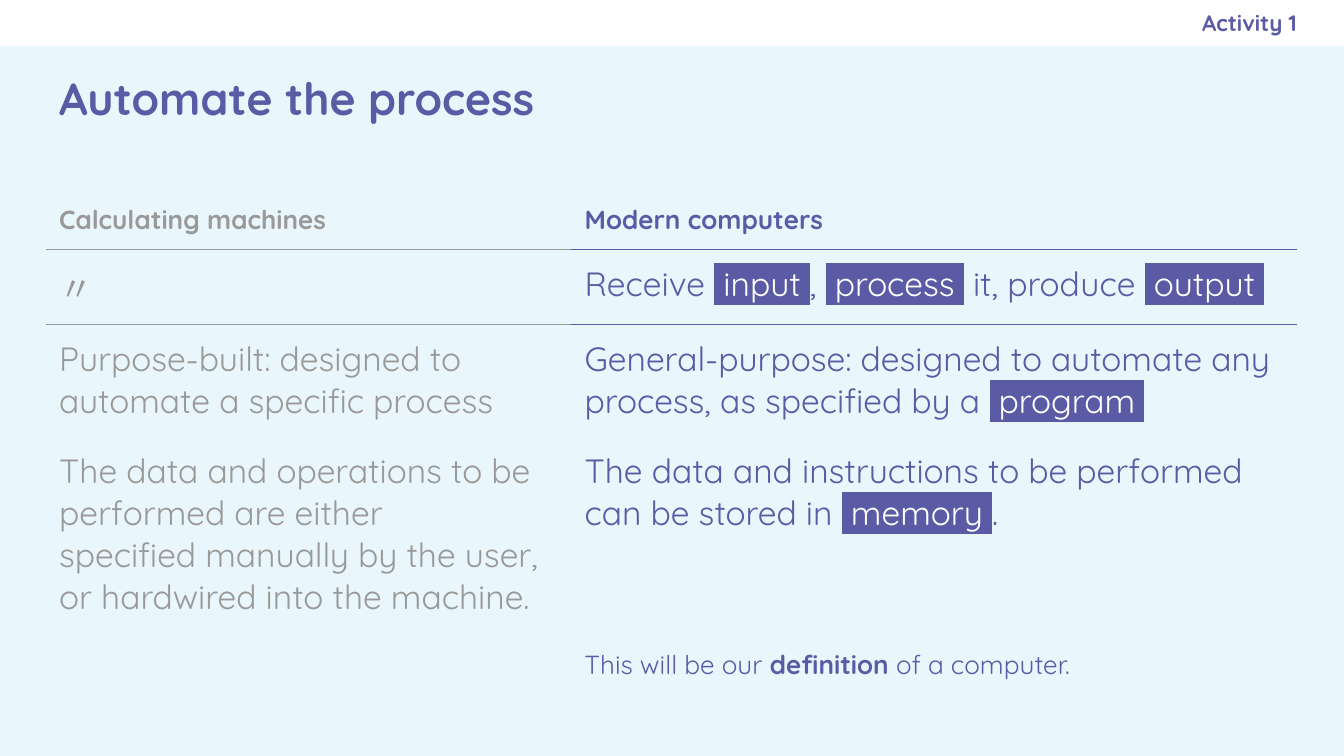
from lxml import etree
from pptx import Presentation
from pptx import util as u
from pptx.dml.color import RGBColor
from pptx.enum import shapes, text
from pptx.oxml import ns

COLOURS = {"ink": "5B5BA5", "muted": "999999", "paper": "E9F7FC", "white": "FFFFFF"}
COLUMNS, ROWS = 100, 56.25  # grid of tenth-inch units
COLUMN_STYLES = ("muted", "ink")

# A run is a string, or a (kind, string) pair: "key" is highlighted, "bold" is bold.
HEADERS = (["Calculating machines"], ["Modern computers"])
COMPARISON = [
    ([["〃"]],
     [["Receive ", ("key", " input "), ", ", ("key", " process "),
       " it, produce ", ("key", " output ")]]),
    ([["Purpose-built: designed to automate a specific process"]],
     [["General-purpose: designed to automate any process, as specified by a ",
       ("key", " program ")]]),
    ([["The data and operations to be performed are either"],
      ["specified manually by the user, or hardwired into the machine."]],
     [["The data and instructions to be performed can be stored in ",
       ("key", " memory "), "."]]),
]


def rgb(name):
    return RGBColor.from_string(COLOURS[name])


def add_colour(parent, tag, name):
    """Append a DrawingML colour container and return it."""
    element = etree.SubElement(parent, ns.qn(tag))
    etree.SubElement(element, ns.qn("a:srgbClr"), val=COLOURS[name])
    return element


def set_attributes(target, values):
    for name, value in values.items():
        setattr(target, name, value)


class SlideBuilder:
    font_name = "Quicksand"

    def __init__(self, presentation):
        self.unit_x = presentation.slide_width / COLUMNS
        self.unit_y = presentation.slide_height / ROWS
        self.slide = presentation.slides.add_slide(presentation.slide_layouts[0])
        fill = self.slide.background.fill
        fill.solid()
        fill.fore_color.rgb = rgb("paper")

    def area(self, left, top, width, height):
        units = (self.unit_x, self.unit_y, self.unit_x, self.unit_y)
        return [round(n * unit) for n, unit in zip((left, top, width, height), units)]

    def add_text(self, frame, paragraphs, size, colour, bold=False, **formats):
        for index, runs in enumerate(paragraphs):
            paragraph = frame.paragraphs[0] if index == 0 else frame.add_paragraph()
            values = {"alignment": text.PP_ALIGN.LEFT, "space_before": u.Pt(0)}
            set_attributes(paragraph, {**values, **formats})
            for item in runs:
                kind, words = ("plain", item) if isinstance(item, str) else item
                run = paragraph.add_run()
                run.text = words
                run.font.color.rgb = rgb("white" if kind == "key" else colour)
                if kind == "key":
                    properties = run._r.get_or_add_rPr()
                    highlight = add_colour(properties, "a:highlight", colour)
                    properties.find(ns.qn("a:solidFill")).addnext(highlight)
                set_attributes(run.font, {"name": self.font_name, "size": u.Pt(size),
                                          "bold": bold or kind == "bold"})

    def set_frame(self, frame, right_inset=0.1, anchor=text.MSO_ANCHOR.TOP):
        inset = u.Inches(0.1)
        set_attributes(frame, {
            "word_wrap": True, "auto_size": text.MSO_AUTO_SIZE.NONE,
            "vertical_anchor": anchor, "margin_left": inset, "margin_top": inset,
            "margin_bottom": inset, "margin_right": u.Inches(right_inset)})

    def band(self, area, colour):
        """Draw a plain strip behind everything else."""
        shape = self.slide.shapes.add_shape(shapes.MSO_SHAPE.RECTANGLE, *self.area(*area))
        shape.shadow.inherit = False
        shape.fill.solid()
        shape.fill.fore_color.rgb = rgb(colour)
        shape.line.fill.background()
        self.slide.shapes._spTree.insert(2, shape._element)

    def placeholder(self, index, area, words, size, right_inset=0.1, **formats):
        shape = self.slide.placeholders[index]
        places = zip(("left", "top", "width", "height"), self.area(*area))
        set_attributes(shape, dict(places))
        self.set_frame(shape.text_frame, right_inset, text.MSO_ANCHOR.MIDDLE)
        self.add_text(shape.text_frame, [[words]], size, "ink", bold=True, **formats)

    def text_box(self, area, runs, size, **formats):
        shape = self.slide.shapes.add_textbox(*self.area(*area))
        self.set_frame(shape.text_frame, 0.06)
        self.add_text(shape.text_frame, [runs], size, "ink", **formats)

    def borders(self, cell, colour, sides):
        properties = cell._tc.get_or_add_tcPr()
        for index, side in enumerate("LRTB"):
            line = etree.Element(ns.qn(f"a:ln{side}"), w=str(u.Pt(0.75)))
            if side in sides:
                add_colour(line, "a:solidFill", colour)
            else:
                etree.SubElement(line, ns.qn("a:noFill"))
            properties.insert(index, line)

    def comparison_table(self, left, top, widths, heights):
        area = self.area(left, top, sum(widths), sum(heights))
        table = self.slide.shapes.add_table(len(heights), len(widths), *area).table
        set_attributes(table, {"first_row": False, "horz_banding": False})
        for column, width in zip(table.columns, widths):
            column.width = round(width * self.unit_x)
        for row, height in zip(table.rows, heights):
            row.height = round(height * self.unit_y)
        contents = [[[header] for header in HEADERS], *COMPARISON]
        sides = ("B", "TB", "T", "")
        inset = u.Inches(0.1)
        for row, cells in enumerate(contents):
            for column, paragraphs in enumerate(cells):
                cell, colour = table.cell(row, column), COLUMN_STYLES[column]
                set_attributes(cell, {
                    "margin_left": inset, "margin_top": inset, "margin_bottom": inset,
                    "margin_right": u.Inches(0.16)})
                cell.fill.background()
                self.borders(cell, colour, sides[row])
                header = row == 0
                self.add_text(cell.text_frame, paragraphs, 14 if header else 18,
                              colour, bold=header)


def main():
    presentation = Presentation()
    presentation.slide_width = u.Inches(10)
    presentation.slide_height = u.Inches(5.625)
    builder = SlideBuilder(presentation)
    builder.band((0, 0, COLUMNS, 3.4), "white")
    builder.placeholder(0, (3.4, 3.4, 93.2, 7.7), "Automate the process", 24)
    builder.placeholder(1, (57.5, 0, 39, 3.4), "Activity 1", 12, right_inset=0,
                        alignment=text.PP_ALIGN.RIGHT)
    builder.comparison_table(3.4, 14.1, widths=(39.1, 54), heights=(4.4, 5.6, 8.3, 14.5))
    builder.text_box((42.5, 46.9, 39, 4.3),
                     ["This will be our ", ("bold", "definition"), " of a computer."],
                     14, line_spacing=1.14)
    presentation.save("out.pptx")


if __name__ == "__main__":
    main()
